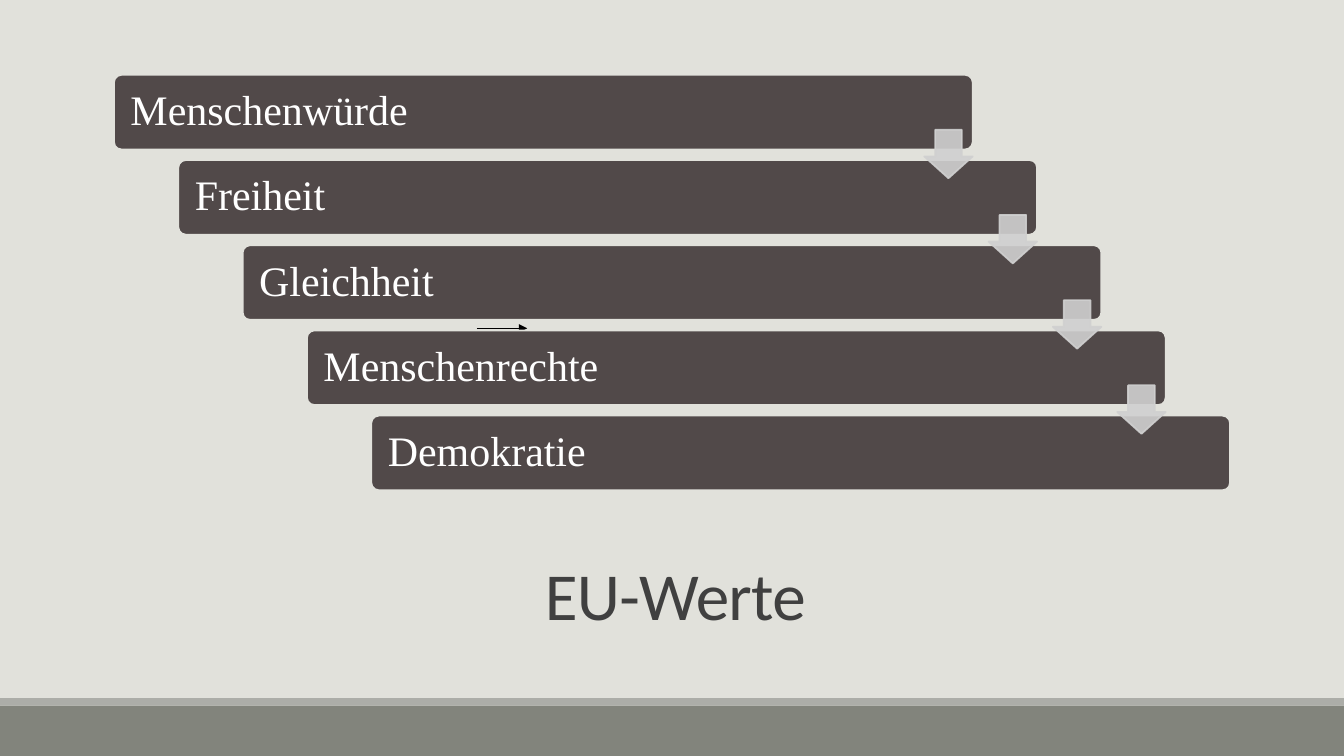
import pptx
import pptx.util
import pptx.dml.color
import pptx.enum.shapes
import pptx.enum.text
import pptx.oxml
import pptx.oxml.ns

Pt = pptx.util.Pt
KIND = pptx.enum.shapes.MSO_SHAPE
ALIGN = pptx.enum.text.PP_ALIGN

PAPER = "E1E1DB"
VALUES = ["Menschenwürde", "Freiheit", "Gleichheit", "Menschenrechte", "Demokratie"]
STEP_X, STEP_Y = 45.95, 60.85


def color(code):
    return pptx.dml.color.RGBColor.from_string(code)


def add_xml(parent, tag, **attrs):
    """Append an empty drawing element to parent."""
    node = pptx.oxml.parse_xml(f"<a:{tag} {pptx.oxml.ns.nsdecls('a')}/>")
    for name, value in attrs.items():
        node.set(name, value)
    parent.append(node)


def write(shape, text, font, size, ink, align=ALIGN.LEFT, inset=7.2,
          lead=0.9, track=None):
    """Write one vertically centred paragraph into a shape."""
    frame = shape.text_frame
    frame.word_wrap = True
    frame.vertical_anchor = pptx.enum.text.MSO_ANCHOR.MIDDLE
    frame.margin_left = frame.margin_right = Pt(inset)
    para = frame.paragraphs[0]
    para.alignment = align
    para.line_spacing = lead
    run = para.add_run()
    run.text = text
    run.font.name = font
    run.font.size = Pt(size)
    run.font.color.rgb = color(ink)
    if track is not None:
        run.font._element.set("spc", str(track))


def add_block(slide, kind, box, fill, line=None, adjust=(), alpha=None):
    """Draw a filled preset shape; alpha is its opacity in percent."""
    shape = slide.shapes.add_shape(kind, *map(Pt, box))
    shape.shadow.inherit = False
    shape.fill.solid()
    shape.fill.fore_color.rgb = color(fill)
    if line:
        shape.line.color.rgb = color(line)
        shape.line.width = Pt(1.25)
    else:
        shape.line.fill.background()
    for index, value in enumerate(adjust):
        shape.adjustments[index] = value
    if alpha:
        for node in list(shape.element.spPr.iter(pptx.oxml.ns.qn("a:srgbClr"))):
            add_xml(node, "alpha", val=str(alpha * 1000))
    return shape


def add_arrow(slide, start, end):
    """Draw a thin black line with an arrowhead at its end."""
    line = slide.shapes.add_connector(
        pptx.enum.shapes.MSO_CONNECTOR.STRAIGHT, *map(Pt, start + end))
    line.line.color.rgb = color("000000")
    line.line.width = Pt(1)
    add_xml(line.line._get_or_add_ln(), "tailEnd", type="triangle")
    add_xml(line.element.spPr, "effectLst")


def main():
    deck = pptx.Presentation()
    deck.slide_width, deck.slide_height = Pt(960), Pt(540)
    slide = deck.slides.add_slide(deck.slide_layouts[6])

    # Background and footer bands
    slide.background.fill.solid()
    slide.background.fill.fore_color.rgb = color(PAPER)
    add_block(slide, KIND.RECTANGLE, (0, 504, 960, 36), "82847C")
    add_block(slide, KIND.RECTANGLE, (0, 498.7, 960, 5.3), "ACADA8")

    # Title
    title = slide.shapes.add_textbox(*map(Pt, (86.4, 381.6, 792, 93.6)))
    write(title, "EU-Werte", "Calibri", 48, "404040", ALIGN.CENTER,
          lead=0.85, track=-50)

    # Small arrow behind the steps
    add_arrow(slide, (340.6, 234.5), (376.6, 234.5))

    # Staircase of values
    for row, value in enumerate(VALUES):
        box = (81.4 + row * STEP_X, 53.5 + row * STEP_Y, 613.4, 53.3)
        bar = add_block(slide, KIND.ROUNDED_RECTANGLE, box, "514949", PAPER, [0.1])
        write(bar, value, "Times New Roman", 30, "FFFFFF", inset=10.2)

    # Arrows from each step to the next
    for row in range(len(VALUES) - 1):
        box = (660.2 + row * STEP_X, 92.7 + row * STEP_Y, 34.6, 34.6)
        add_block(slide, KIND.DOWN_ARROW, box, "D0D0D0", "D0D0D0",
                  [0.55, 0.45], alpha=90)

    deck.save("out.pptx")


if __name__ == "__main__":
    main()
